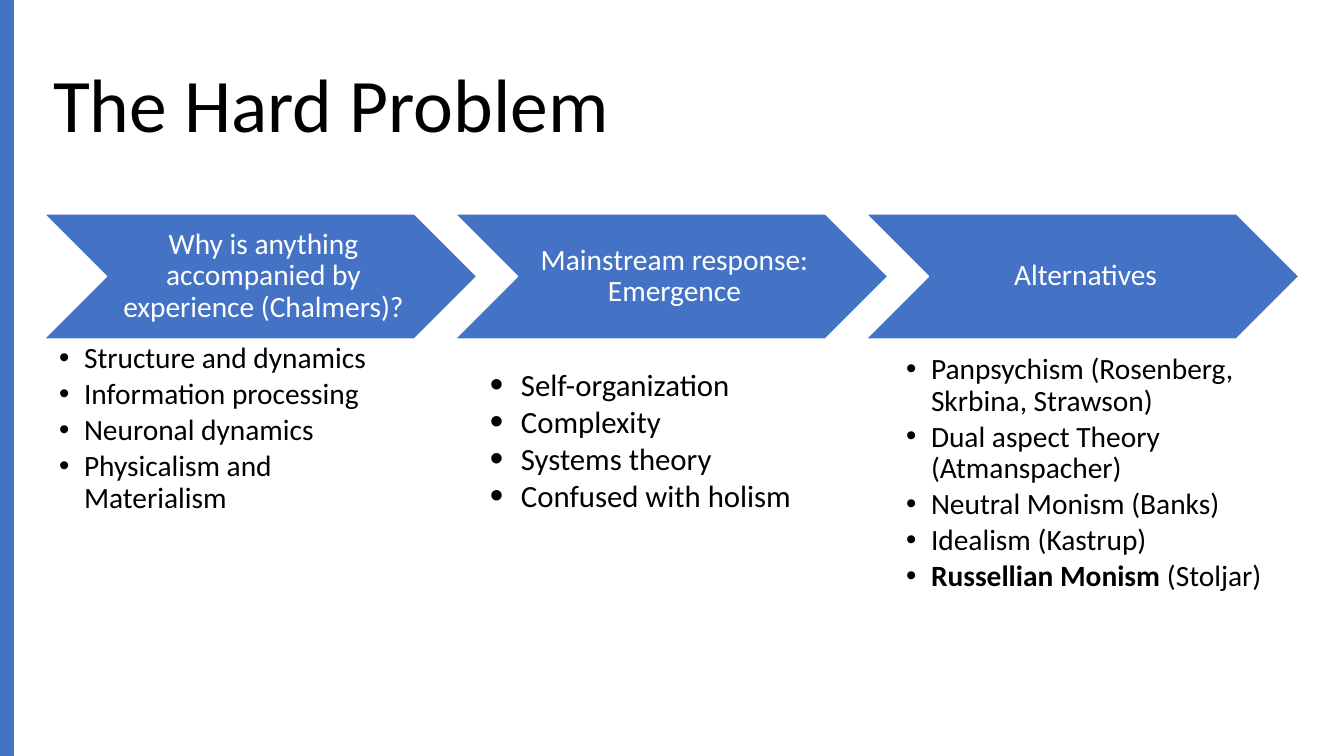
from dataclasses import dataclass

from lxml.etree import SubElement
from pptx import Presentation
from pptx.dml.color import RGBColor
from pptx.enum.shapes import MSO_SHAPE
from pptx.enum.text import MSO_ANCHOR, MSO_AUTO_SIZE, PP_ALIGN
from pptx.oxml.ns import qn
from pptx.util import Pt

SCALE = 914400 / 100.8


def px(count):
    return round(count * SCALE)


@dataclass(frozen=True)
class Theme:
    font: str = "Calibri"
    ink: str = "000000"
    paper: str = "FFFFFF"
    blue: str = "4472C4"
    head: int = 54
    step: int = 21
    large: int = 22


def add_dot(para, indent, scale):
    props = para._p.get_or_add_pPr()
    props.set("marL", str(px(indent)))
    props.set("indent", str(-px(indent)))
    SubElement(props, qn("a:buSzPct"), val=str(scale * 1000))
    SubElement(props, qn("a:buFont"), typeface="Arial")
    SubElement(props, qn("a:buChar"), char="•")


def write(frame, lines, font, size, color, align=PP_ALIGN.LEFT,
          anchor=MSO_ANCHOR.TOP, inset=(0, 0, 0, 0), wrap=True,
          space=0.9, after=0, indent=0, dot=100):
    frame.auto_size = MSO_AUTO_SIZE.NONE
    frame.word_wrap = wrap
    frame.vertical_anchor = anchor
    (frame.margin_left, frame.margin_top,
     frame.margin_right, frame.margin_bottom) = map(px, inset)
    for index, line in enumerate(lines):
        para = frame.add_paragraph() if index else frame.paragraphs[0]
        para.alignment = align
        para.line_spacing = space
        para.space_before = Pt(0)
        para.space_after = Pt(after)
        if indent:
            add_dot(para, indent, dot)
        for part, words in enumerate(line.split("**")):
            if words:
                run = para.add_run()
                run.text = words
                run.font.name = font
                run.font.size = Pt(size)
                run.font.bold = part % 2 == 1
                run.font.color.rgb = RGBColor.from_string(color)


class Deck:
    def __init__(self, theme):
        self.theme = theme
        self.show = Presentation()
        self.show.slide_width = px(1344)
        self.show.slide_height = px(756)
        self.slide = self.show.slides.add_slide(self.show.slide_layouts[4])

    def place(self, slot, box):
        holder = self.slide.placeholders[slot]
        holder.left, holder.top, holder.width, holder.height = map(px, box)
        return holder.text_frame

    def title(self, text, box):
        write(self.place(0, box), [text], self.theme.font, self.theme.head,
              self.theme.ink, anchor=MSO_ANCHOR.MIDDLE, inset=(10, 5, 10, 5))

    def bullets(self, slot, lines, box, size, **style):
        write(self.place(slot, box), lines, self.theme.font, size,
              self.theme.ink, **style)

    def block(self, kind, box):
        shape = self.slide.shapes.add_shape(kind, *map(px, box))
        shape.shadow.inherit = False
        shape.fill.solid()
        shape.fill.fore_color.rgb = RGBColor.from_string(self.theme.blue)
        shape.line.fill.background()
        return shape

    def arrow(self, text, box):
        shape = self.block(MSO_SHAPE.CHEVRON, box)
        shape.line.color.rgb = RGBColor.from_string(self.theme.paper)
        shape.line.width = Pt(1)
        write(shape.text_frame, [text], self.theme.font, self.theme.step,
              self.theme.paper, align=PP_ALIGN.CENTER,
              anchor=MSO_ANCHOR.MIDDLE, inset=(9, 3, 3, 3))

    def save(self):
        for holder in list(self.slide.placeholders):
            if not holder.text_frame.text:
                holder.element.getparent().remove(holder.element)
        self.show.save("out.pptx")


def main():
    theme = Theme()
    deck = Deck(theme)
    deck.title("The Hard Problem", (43, 35, 1258, 146))
    deck.block(MSO_SHAPE.RECTANGLE, (0, 0, 14, 756))

    steps = ["Why is anything accompanied by experience (Chalmers)?",
             "Mainstream response: Emergence",
             "Alternatives"]
    for index, text in enumerate(steps):
        deck.arrow(text, (44 + 411 * index, 214, 433, 125))

    small = dict(size=theme.step, after=3, indent=25)
    deck.bullets(1, ["Structure and dynamics",
                     "Information processing",
                     "Neuronal dynamics",
                     "Physicalism and Materialism"],
                 (59, 343, 347, 313), **small)
    deck.bullets(2, ["Self-organization",
                     "Complexity",
                     "Systems theory",
                     "Confused with holism"],
                 (480, 361, 326, 159), theme.large, wrap=False, space=1.0,
                 inset=(10, 5, 10, 5), indent=31, dot=125)
    deck.bullets(4, ["Panpsychism (Rosenberg, Skrbina, Strawson)",
                     "Dual aspect Theory (Atmanspacher)",
                     "Neutral Monism (Banks)",
                     "Idealism (Kastrup)",
                     "**Russellian Monism **(Stoljar)"],
                 (906, 354, 370, 313), **small)
    deck.save()


if __name__ == "__main__":
    main()
